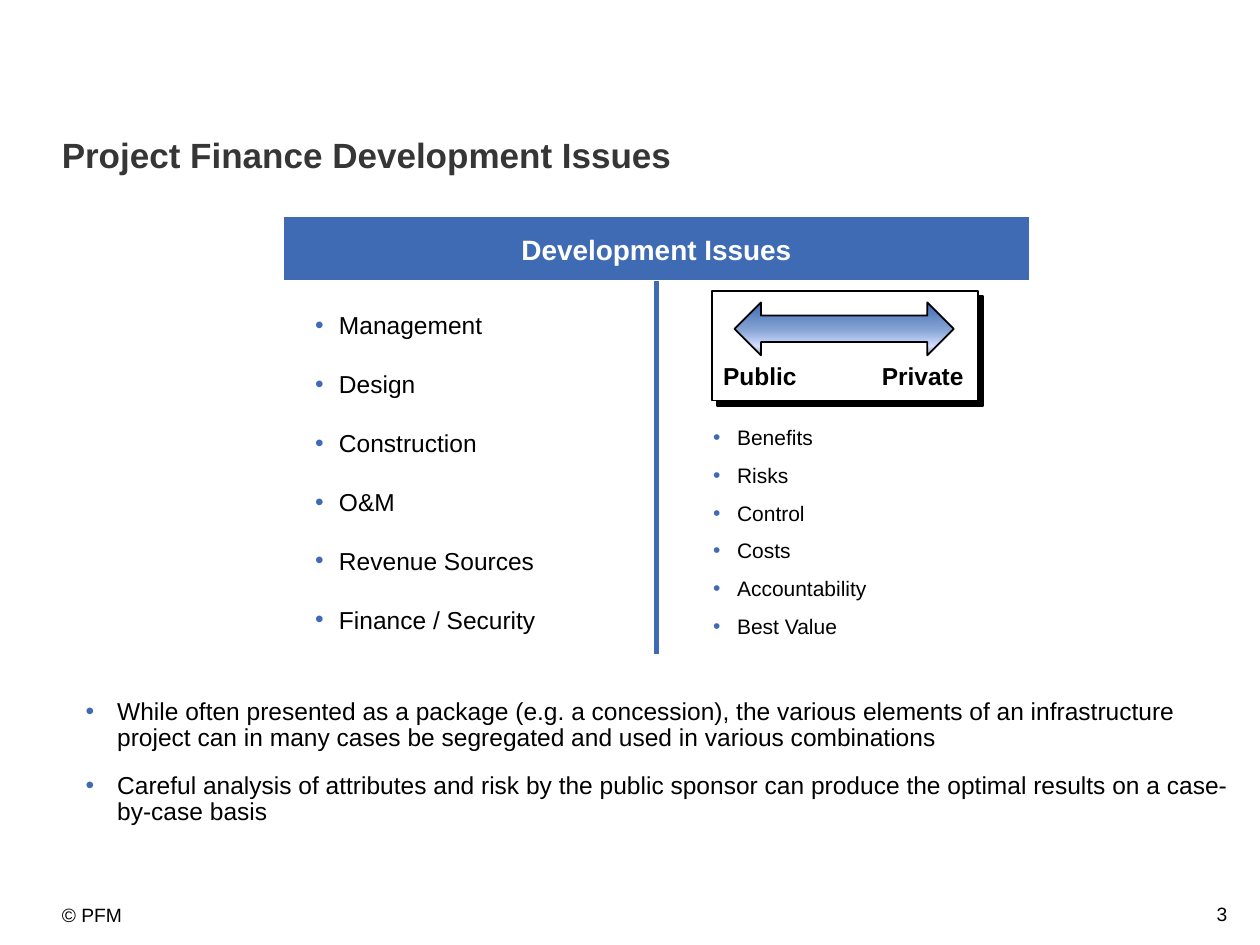
from lxml import etree
from pptx import Presentation
from pptx.dml.color import RGBColor
from pptx.enum.shapes import MSO_CONNECTOR as Connector, MSO_SHAPE as Shape
from pptx.enum.text import MSO_ANCHOR as Anchor, MSO_AUTO_SIZE as AutoSize, PP_ALIGN as Align
from pptx.oxml.ns import qn
from pptx.util import Inches, Pt

BLUE, BLACK, WHITE = "3E6BB3", "000000", "FFFFFF"


def color(hex_string):
    return RGBColor.from_string(hex_string)


def write(shape, lines, size=14, ink=BLACK, bold=False, align=Align.LEFT, anchor=Anchor.TOP,
          margins=(0, 0), wrap=True, spacing=1.0, gap=0, indent=None):
    """Fill a shape with one paragraph per line; an indent in inches makes them bullets."""
    frame = shape.text_frame
    frame.text = "\n".join(lines)
    frame.auto_size = AutoSize.NONE
    frame.word_wrap = wrap
    frame.vertical_anchor = anchor
    frame.margin_left = frame.margin_right = Inches(margins[0])
    frame.margin_top = frame.margin_bottom = Inches(margins[1])
    for number, paragraph in enumerate(frame.paragraphs):
        paragraph.alignment = align
        paragraph.line_spacing = spacing
        paragraph.space_before = Pt(gap if number else 0)
        paragraph.space_after = Pt(gap)
        if indent:
            properties = paragraph._p.get_or_add_pPr()
            properties.set("marL", str(Inches(indent)))
            properties.set("indent", str(-Inches(indent)))
            bullet_color = etree.SubElement(properties, qn("a:buClr"))
            etree.SubElement(bullet_color, qn("a:srgbClr"), val=BLUE)
            etree.SubElement(properties, qn("a:buFont"), typeface="Arial")
            etree.SubElement(properties, qn("a:buChar"), char="•")
        font = paragraph.runs[0].font
        font.name, font.size, font.bold = "Arial", Pt(size), bold
        font.color.rgb = color(ink)


def place(shape, left, top, width, height):
    shape.left, shape.top = Inches(left), Inches(top)
    shape.width, shape.height = Inches(width), Inches(height)


presentation = Presentation()
presentation.slide_width, presentation.slide_height = Inches(10), Inches(7.5)
slide = presentation.slides.add_slide(presentation.slide_layouts[1])
shapes = slide.shapes

# Title and conclusions
title, conclusions = slide.placeholders
place(title, 0.49, 1.1, 8.62, 0.3)
write(title, ["Project Finance Development Issues"], size=20, ink="373637", bold=True,
      anchor=Anchor.MIDDLE, spacing=0.9)
place(conclusions, 0.58, 5.5, 9.33, 1.25)
write(conclusions, [
    "While often presented as a package (e.g. a concession), the various elements of an "
    "infrastructure project can in many cases be segregated and used in various combinations",
    "Careful analysis of attributes and risk by the public sponsor can produce the optimal "
    "results on a case-by-case basis",
], margins=(0.1, 0.05), spacing=0.9, gap=6, indent=0.25)

# Header, public-private panel and arrow
blocks = []
for preset, left, top, width, height, fill, line, weight in [
    (Shape.RECTANGLE, 2.25, 1.72, 5.92, 0.51, BLUE, WHITE, 0.75),
    (Shape.RECTANGLE, 5.65, 2.31, 2.11, 0.87, WHITE, BLACK, 1),
    (Shape.LEFT_RIGHT_ARROW, 5.83, 2.4, 1.74, 0.42, BLUE, BLACK, 1),
]:
    block = shapes.add_shape(preset, Inches(left), Inches(top), Inches(width), Inches(height))
    block.shadow.inherit = False
    block.fill.solid()
    block.fill.fore_color.rgb = color(fill)
    block.line.color.rgb = color(line)
    block.line.width = Pt(weight)
    blocks.append(block)
header, panel, arrow = blocks
write(header, ["Development Issues"], size=16, ink=WHITE, bold=True, align=Align.CENTER,
      anchor=Anchor.MIDDLE, margins=(0.08, 0.08))

effects = panel._element.spPr.find(qn("a:effectLst"))
shadow = etree.SubElement(effects, qn("a:outerShdw"), dist=str(Pt(4.2)), dir="2700000",
                          algn="ctr", rotWithShape="0")
etree.SubElement(shadow, qn("a:srgbClr"), val=BLACK)

arrow.fill.gradient()
arrow.fill.gradient_angle = 270
stops = arrow._element.spPr.find(qn("a:gradFill")).find(qn("a:gsLst"))
for stop in list(stops):
    stops.remove(stop)
for percent, stop_color in [(0, BLUE), (53, "87A5D5"), (83, "D4DEFF"), (100, "96AB94")]:
    stop = etree.SubElement(stops, qn("a:gs"), pos=str(percent * 1000))
    etree.SubElement(stop, qn("a:srgbClr"), val=stop_color)

# Divider between the two columns
divider = shapes.add_connector(Connector.STRAIGHT, Inches(5.21), Inches(2.23),
                               Inches(5.21), Inches(5.19))
divider.begin_connect(header, 2)
divider.line.color.rgb = color(BLUE)
divider.line.width = Pt(2.5)
etree.SubElement(divider._element.spPr, qn("a:effectLst"))

# Lists, arrow labels and footer
issues = ["Management", "Design", "Construction", "O&M", "Revenue Sources", "Finance / Security"]
attributes = ["Benefits", "Risks", "Control", "Costs", "Accountability", "Best Value"]
label = dict(bold=True, margins=(0.1, 0.05), wrap=False)
for box, lines, text_format in [
    ((2.5, 2.23, 2.52, 2.96), issues, dict(spacing=2.0, indent=0.19)),
    ((5.66, 3.27, 2.52, 1.83), attributes, dict(size=12, spacing=1.5, indent=0.19)),
    ((5.64, 2.82, 0.79, 0.34), ["Public"], label),
    ((6.9, 2.82, 0.86, 0.34), ["Private"], label),
    ((0.49, 7.17, 1.39, 0.27), ["© PFM"], dict(size=11, wrap=False)),
    ((9.41, 7.11, 0.43, 0.4), ["3"], dict(size=11, align=Align.RIGHT, margins=(0.1, 0.05))),
]:
    write(shapes.add_textbox(*map(Inches, box)), lines, **text_format)

presentation.save("out.pptx")
